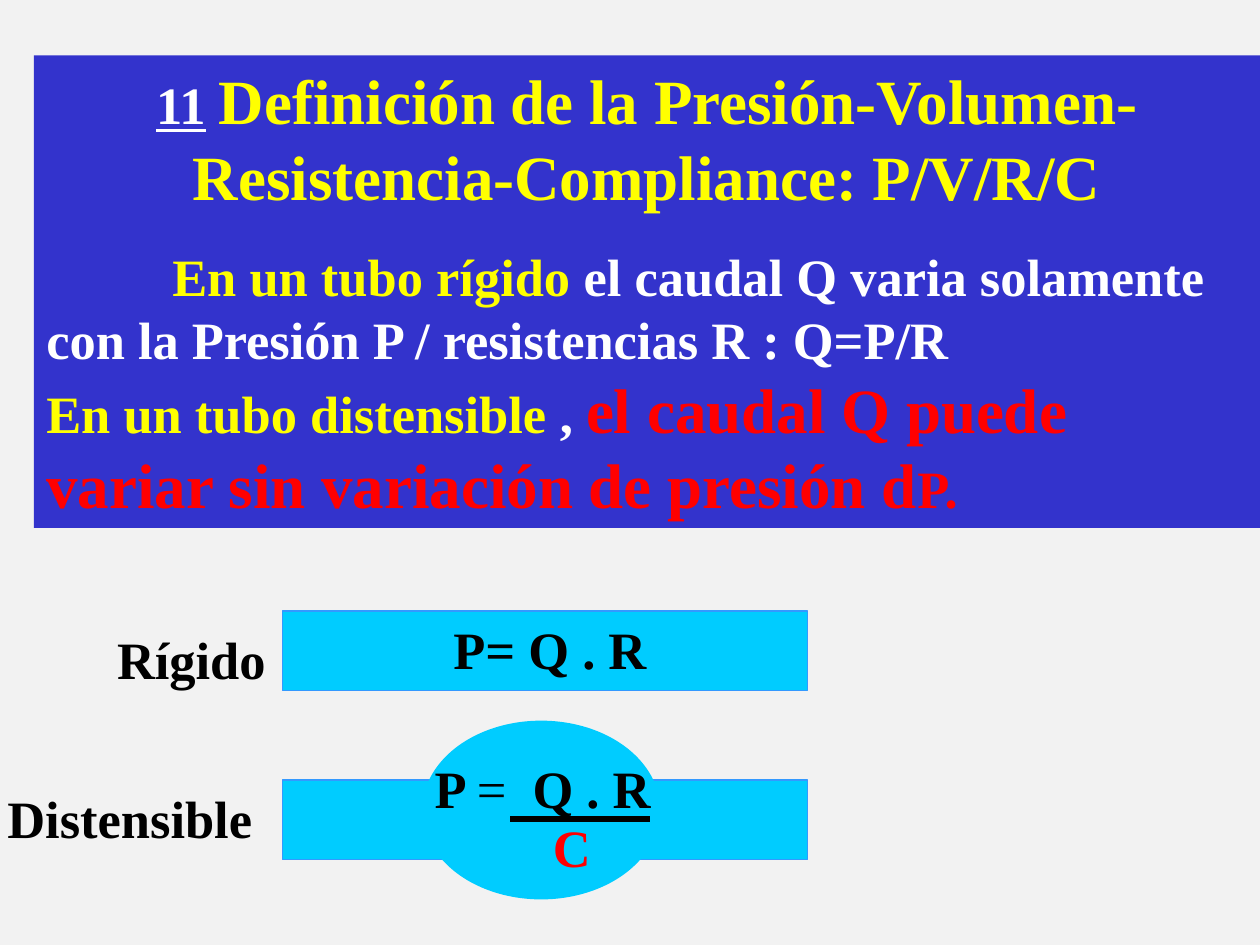
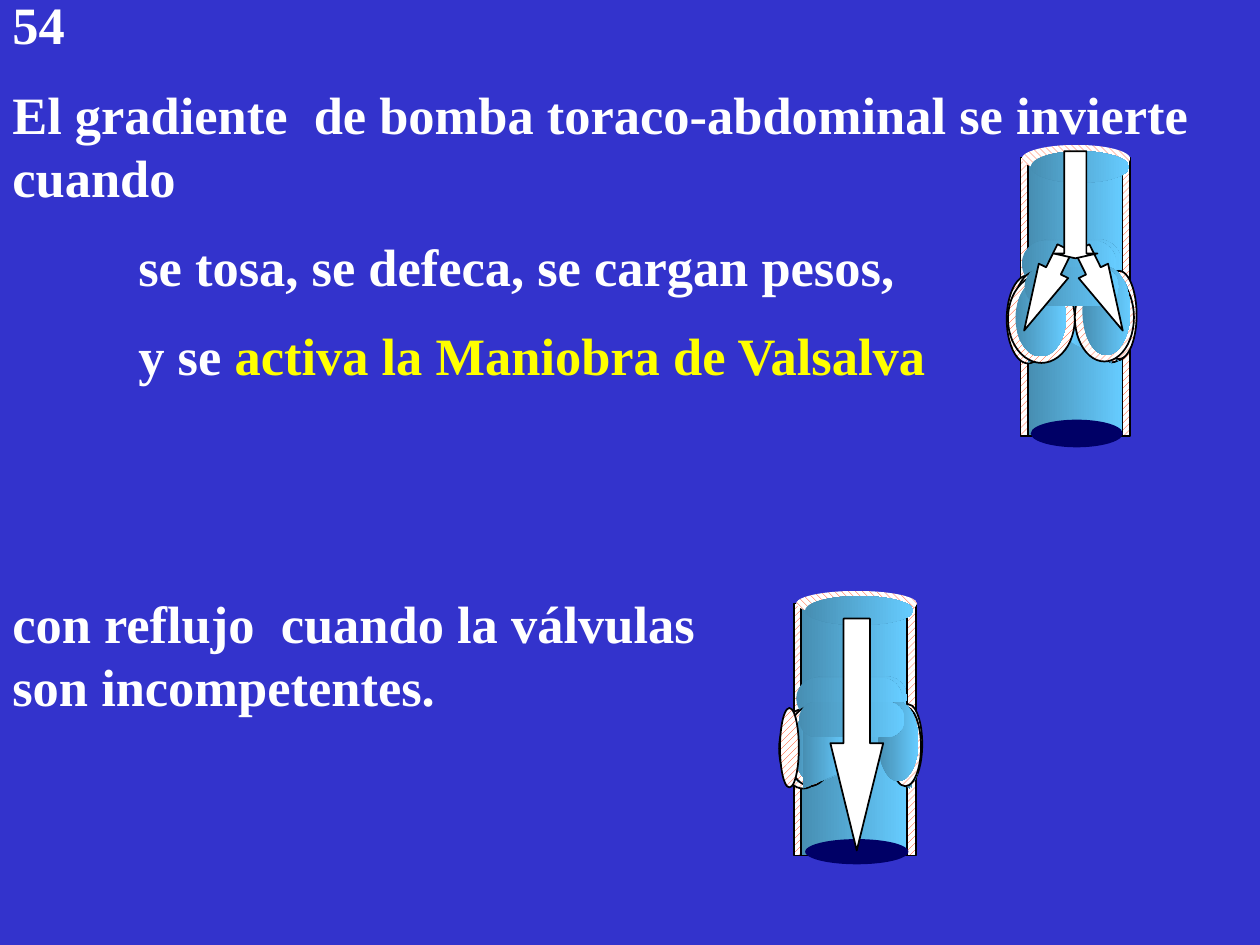
from dataclasses import dataclass, replace

from lxml import etree
from pptx import Presentation
from pptx.dml.color import RGBColor
from pptx.enum.dml import MSO_PATTERN
from pptx.enum.shapes import MSO_CONNECTOR, MSO_SHAPE
from pptx.enum.text import MSO_ANCHOR, PP_ALIGN
from pptx.oxml.ns import qn
from pptx.util import Pt

RECT, OVAL = MSO_SHAPE.RECTANGLE, MSO_SHAPE.OVAL
ROUND, DOWN_ARROW = MSO_SHAPE.ROUNDED_RECTANGLE, MSO_SHAPE.DOWN_ARROW
HATCH_UP = MSO_PATTERN.WIDE_UPWARD_DIAGONAL
HATCH_DOWN = MSO_PATTERN.WIDE_DOWNWARD_DIAGONAL
STRAIGHT = MSO_CONNECTOR.STRAIGHT
LEFT, CENTER = PP_ALIGN.LEFT, PP_ALIGN.CENTER
TOP = MSO_ANCHOR.TOP

FONT = "Times New Roman"
PAGE, PANEL, CYAN, CYAN_EDGE = "F2F2F2", "3333CC", "00CCFF", "3399FF"
WHITE, BLACK, YELLOW, RED = "FFFFFF", "000000", "FFFF00", "FF0000"
VEIN_DARK, VEIN_LIGHT, NAVY, HATCH_INK = "478EB2", "66CCFF", "000066", "FF3300"


@dataclass(frozen=True)
class Run:
    text: str
    color: str = WHITE
    size: float = 30
    bold: bool = True
    underline: bool = False


@dataclass(frozen=True)
class Para:
    runs: tuple[Run, ...]
    before: float = 0
    first: float = 0
    align: PP_ALIGN = LEFT


@dataclass(frozen=True)
class Style:
    preset: MSO_SHAPE
    fill: str | tuple[str, str] | MSO_PATTERN
    line: str | None = None


@dataclass(frozen=True)
class Part:
    style: str
    x: float
    y: float
    w: float
    h: float
    adjust: tuple[float, ...] = ()
    turn: float = 0


@dataclass(frozen=True)
class Valve:
    tube: tuple[Part, ...]
    leaflets: tuple[Part, ...]
    collar: Part
    ends: tuple[Part, ...]
    shifts: tuple[tuple[float, float], ...]
    front: tuple[Part, ...]


VEIN = (VEIN_DARK, VEIN_LIGHT)
STYLES = {
    "wall": Style(RECT, HATCH_UP, BLACK),
    "lumen": Style(RECT, VEIN, BLACK),
    "pocket": Style(OVAL, HATCH_UP, BLACK),
    "cavity": Style(OVAL, VEIN),
    "collar": Style(ROUND, VEIN),
    "rim": Style(OVAL, HATCH_DOWN),
    "base": Style(OVAL, NAVY),
    "arrow": Style(DOWN_ARROW, WHITE, BLACK),
}
COLLAR_SHIFT = (-2.9, 0.7)
LONG_HEAD = (0.5, 2.03)

CLOSED_VALVE = Valve(
    tube=(Part("wall", 583.2, 90, 62.6, 159.1), Part("lumen", 587.5, 90, 54, 159.1)),
    leaflets=(
        Part("flap", 590.4, 157.7, 23.4, 49),
        Part("flap", 638.6, 157.7, -23.4, 49),
        Part("pocket", 578.2, 156.2, 24.5, 50.4),
        Part("pocket", 628.6, 155.5, 20.2, 50.4),
        Part("cavity", 631.4, 159.1, 14.4, 43.9),
        Part("cavity", 582.5, 159.1, 18, 43.9),
    ),
    collar=Part("collar", 586.8, 136.8, 54, 26.6, (0.5,)),
    ends=(
        Part("rim", 583.9, 82.8, 61.9, 15.8),
        Part("cavity", 589, 86.4, 56.2, 18),
        Part("base", 589, 239.8, 52.6, 15.8),
    ),
    shifts=((-2.9, 1.1), (0.7, -0.7)),
    front=(
        Part("flap", 587.5, 158.4, 23.4, 49),
        Part("flap", 635.7, 158.4, -23.4, 49),
        Part("pocket", 576, 157, 38.2, 50.4),
        Part("pocket", 614.2, 156.2, 33.8, 50.4),
        Part("cavity", 618.5, 152.6, 27.4, 50.4),
        Part("cavity", 580.3, 159.8, 28.8, 43.9),
        Part("collar", 585.4, 152.6, 54, 22.3, (0.5,)),
        Part("arrow", 587.5, 139, 18.7, 52.6, LONG_HEAD, 26.2),
        Part("arrow", 620.6, 139, 18.7, 52.6, LONG_HEAD, -26.2),
        Part("arrow", 601.9, 86.4, 25.2, 61.2, (0.5, 0.11)),
    ),
)

OPEN_VALVE = Valve(
    tube=(Part("wall", 453.6, 344.9, 69.8, 144), Part("lumen", 457.9, 344.9, 60.5, 144)),
    leaflets=(
        Part("flap", 461.5, 405.4, 26, 44.6),
        Part("pocket", 448.6, 403.9, 27.4, 45.4),
        Part("cavity", 452.9, 406.8, 19.4, 39.6),
    ),
    collar=Part("collar", 457.9, 386.6, 60.5, 23.8, (0.5,)),
    ends=(
        Part("rim", 455, 337.7, 69.1, 14.4),
        Part("cavity", 460.1, 340.6, 61.9, 16.6),
        Part("base", 460.1, 479.5, 59, 14.4),
    ),
    shifts=((-3.4, 1.3), (0.7, -0.2)),
    front=(
        Part("flap", 458.6, 406.1, 26, 44.6),
        Part("pocket", 445.7, 404.6, 10.8, 45.4),
        Part("pocket", 511.2, 402.5, 15.8, 45.4),
        Part("flap", 521.3, 405.4, -12.2, 44.6),
        Part("cavity", 517.7, 406.8, 7.9, 39.6),
        Part("flap", 519.9, 406.1, -12.2, 44.6),
        Part("pocket", 508.3, 403.9, 18, 45.4),
        Part("cavity", 501.8, 401, 23, 45.4),
        Part("collar", 456.5, 401, 60.5, 20.2, (0.5,)),
        Part("arrow", 474.5, 353.5, 30.2, 132.5, LONG_HEAD),
    ),
)


def rgb(value: str) -> RGBColor:
    return RGBColor.from_string(value)


def paint(sp, fill, line: str | None = None, width: float = 1) -> None:
    sp.shadow.inherit = False
    if isinstance(fill, MSO_PATTERN):
        sp.fill.patterned()
        sp.fill.pattern = fill
        sp.fill.fore_color.rgb = rgb(HATCH_INK)
        sp.fill.back_color.rgb = rgb(WHITE)
    elif isinstance(fill, tuple):
        sp.fill.gradient()
        sp.fill.gradient_angle = 0
        for stop, color, position in zip(sp.fill.gradient_stops, fill, (0, 1)):
            stop.color.rgb = rgb(color)
            stop.position = position
    else:
        sp.fill.solid()
        sp.fill.fore_color.rgb = rgb(fill)
    if line:
        sp.line.color.rgb = rgb(line)
        sp.line.width = Pt(width)
    else:
        sp.line.fill.background()


def add_preset(shapes, preset: MSO_SHAPE, x: float, y: float, w: float, h: float,
               fill, line: str | None = None, width: float = 1):
    sp = shapes.add_shape(preset, Pt(x), Pt(y), Pt(w), Pt(h))
    paint(sp, fill, line, width)
    return sp


def write(sp, paras: list[Para]) -> None:
    tf = sp.text_frame
    tf.word_wrap = True
    tf.vertical_anchor = TOP
    for i, para in enumerate(paras):
        p = tf.paragraphs[0] if i == 0 else tf.add_paragraph()
        p.alignment = para.align
        p.space_before = Pt(para.before)
        if para.first:
            p._p.get_or_add_pPr().set("indent", str(Pt(para.first)))
        for run in para.runs:
            r = p.add_run()
            r.text = run.text
            r.font.name = FONT
            r.font.size = Pt(run.size)
            r.font.bold = run.bold
            r.font.underline = run.underline
            r.font.color.rgb = rgb(run.color)


def add_label(shapes, x: float, y: float, w: float, *runs: Run) -> None:
    write(shapes.add_textbox(Pt(x), Pt(y), Pt(w), Pt(44)), [Para(runs)])


def add_line(shapes, x1: float, y1: float, x2: float, y2: float, color: str, width: float) -> None:
    line = shapes.add_connector(STRAIGHT, Pt(x1), Pt(y1), Pt(x2), Pt(y2))
    line.line.color.rgb = rgb(color)
    line.line.width = Pt(width)
    etree.SubElement(line._element.spPr, qn("a:effectLst"))


def add_flap(shapes, part: Part) -> None:
    tip, inset = part.x + part.w, part.h / 4
    bottom = part.y + part.h
    corners = [(tip, part.y + inset), (tip, bottom - inset), (part.x, bottom)]
    builder = shapes.build_freeform(Pt(part.x), Pt(part.y))
    builder.add_line_segments([(Pt(x), Pt(y)) for x, y in corners], close=True)
    paint(builder.convert_to_shape(), VEIN if part.w > 0 else VEIN[::-1])


def add_parts(shapes, parts: tuple[Part, ...], dx: float = 0, dy: float = 0) -> None:
    for base in parts:
        part = replace(base, x=base.x + dx, y=base.y + dy)
        if part.style == "flap":
            add_flap(shapes, part)
            continue
        style = STYLES[part.style]
        sp = add_preset(shapes, style.preset, part.x, part.y, part.w, part.h, style.fill, style.line)
        sp.rotation = part.turn
        for i, value in enumerate(part.adjust):
            sp.adjustments[i] = value


def add_valve(s, valve: Valve) -> None:
    shapes = s.shapes.add_group_shape().shapes
    add_parts(shapes, valve.tube + valve.leaflets + (valve.collar,) + valve.ends)
    first, second = valve.shifts
    add_parts(shapes, valve.leaflets, *first)
    add_parts(shapes, (valve.collar,), *COLLAR_SHIFT)
    add_parts(shapes, valve.leaflets, *second)
    add_parts(shapes, valve.front)


def add_panel_slide(prs, x: float, y: float, w: float, h: float, paras: list[Para]):
    s = prs.slides.add_slide(prs.slide_layouts[6])
    s.background.fill.solid()
    s.background.fill.fore_color.rgb = rgb(PAGE)
    write(add_preset(s.shapes, RECT, x, y, w, h, PANEL), paras)
    return s


def build_definition(prs) -> None:
    s = add_panel_slide(prs, 19.4, 31.7, 700.6, 270, [
        Para((Run("11", underline=True), Run(" "),
              Run("Definición de la Presión-Volumen-Resistencia-Compliance: P/V/R/C", YELLOW, 36)),
             align=CENTER),
        Para((Run("En un tubo rígido ", YELLOW),
              Run("el caudal Q varia solamente con la Presión P / resistencias R : Q=P/R")),
             before=18, first=72),
        Para((Run("En un tubo distensible ", YELLOW), Run(", "),
              Run("el caudal Q puede variar sin variación de presión d", RED, 36), Run("P.", RED))),
    ])
    shapes = s.shapes.add_group_shape().shapes
    for y in (349.2, 445.7):
        add_preset(shapes, RECT, 161.3, y, 300.2, 45.4, CYAN, CYAN_EDGE, 0.75)
    add_preset(shapes, OVAL, 241.2, 411.8, 136.1, 102.2, CYAN)
    add_label(shapes, 59.8, 355, 254.9, Run("Rígido", BLACK))
    add_label(shapes, -2.9, 445.7, 334.8, Run("Distensible", BLACK))
    add_label(shapes, 252, 349.2, 147.6, Run("P= Q . R", BLACK))
    add_label(shapes, 241.2, 428.4, 147.6,
              Run("P ", BLACK), Run("=", BLACK, bold=False), Run("  Q . R", BLACK))
    add_label(shapes, 308.9, 462.2, 147.6, Run("C", RED))
    add_line(shapes, 291.6, 468, 371.5, 468, BLACK, 3)


def build_valsalva(prs) -> None:
    s = add_panel_slide(prs, 0, -7.9, 720, 716.4, [
        Para((Run("54"),)),
        Para((Run("El gradiente  de bomba toraco-abdominal se invierte cuando"),), before=15),
        Para((Run("se tosa, se defeca, se cargan pesos,"),), before=15, first=72),
        Para((Run("y se "), Run("activa la Maniobra de Valsalva", YELLOW)), before=15, first=72),
        Para((Run("con reflujo  cuando la válvulas"),), before=117),
        Para((Run("son incompetentes."),)),
    ])
    for valve in (CLOSED_VALVE, OPEN_VALVE):
        add_valve(s, valve)


def main() -> None:
    prs = Presentation()
    prs.slide_width, prs.slide_height = Pt(720), Pt(540)
    build_definition(prs)
    build_valsalva(prs)
    prs.save("out.pptx")


if __name__ == "__main__":
    main()
